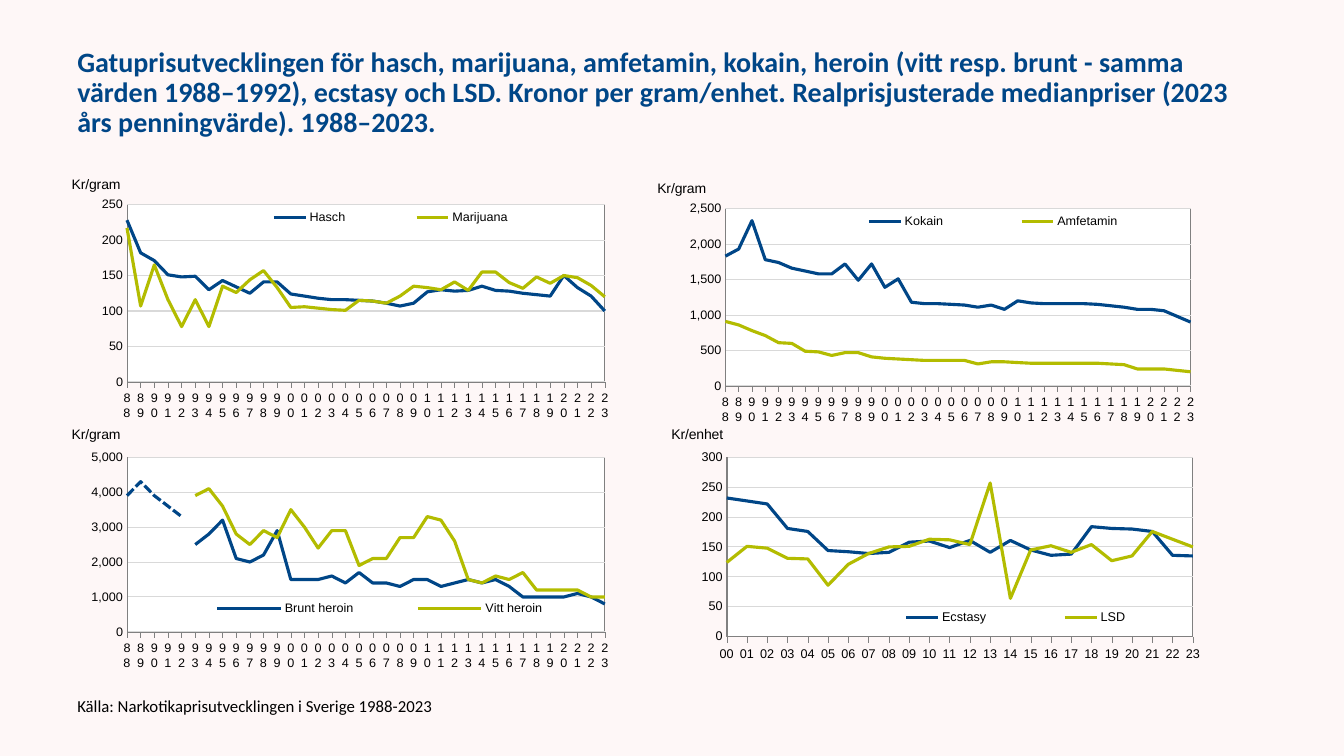
import pptx
import pptx.util
import pptx.chart.data
import pptx.dml.color
import pptx.enum.chart
import pptx.enum.dml
import pptx.enum.text
import pptx.oxml
import pptx.oxml.ns

BLUE, GREEN, BLACK = "004687", "B3BC00", "000000"
AXIS, GRID, WHITE, PAGE = "808080", "D9D9D9", "FFFFFF", "FEF7F7"
NS = pptx.oxml.ns.nsdecls("c", "a")
PERCENT_COL = pptx.util.Inches(13.333) / 100
PERCENT_ROW = pptx.util.Inches(7.5) / 100


def rgb(value):
    return pptx.dml.color.RGBColor.from_string(value)


def grid_box(left, top, width, height):
    return (round(left * PERCENT_COL), round(top * PERCENT_ROW),
            round(width * PERCENT_COL), round(height * PERCENT_ROW))


def style_font(font, name, size, color, bold=False):
    font.name, font.size, font.bold = name, pptx.util.Pt(size), bold
    font.color.rgb = rgb(color)


def style_line(line, color, width):
    line.color.rgb = rgb(color)
    line.width = pptx.util.Pt(width)


def fill_placeholder(sp, box, text, size, color, bold=False):
    sp.left, sp.top, sp.width, sp.height = grid_box(*box)
    tf = sp.text_frame
    tf.word_wrap = True
    tf.auto_size = pptx.enum.text.MSO_AUTO_SIZE.NONE
    tf.vertical_anchor = pptx.enum.text.MSO_ANCHOR.MIDDLE
    p = tf.paragraphs[0]
    pPr = p._p.get_or_add_pPr()
    pPr.set("marL", "0")
    pPr.set("indent", "0")
    pPr.append(pptx.oxml.parse_xml(f"<a:buNone {NS}/>"))
    p.alignment = pptx.enum.text.PP_ALIGN.LEFT
    p.line_spacing = 0.9
    p.space_before = pptx.util.Pt(0)
    r = p.add_run()
    r.text = text
    style_font(r.font, "Calibri", size, color, bold)


def set_layout(parent, index, target="", **percents):
    for old in parent.xpath("./c:layout"):
        parent.remove(old)
    inner = f'<c:layoutTarget val="{target}"/>' if target else ""
    inner += '<c:xMode val="edge"/><c:yMode val="edge"/>'
    inner += "".join(f'<c:{key} val="{value / 100:.4f}"/>' for key, value in percents.items())
    parent.insert(index, pptx.oxml.parse_xml(
        f"<c:layout {NS}><c:manualLayout>{inner}</c:manualLayout></c:layout>"))


def style_category_axis(axis):
    axis.major_tick_mark = pptx.enum.chart.XL_TICK_MARK.OUTSIDE
    axis.has_major_gridlines = False
    style_font(axis.tick_labels.font, "Arial", 9, BLACK)
    axis._element.xpath("./c:txPr/a:bodyPr")[0].set("rot", "0")
    style_line(axis.format.line, AXIS, 0.25)


def style_value_axis(axis, unit, top, step):
    axis.minimum_scale, axis.maximum_scale, axis.major_unit = 0, top, step
    axis.major_tick_mark = pptx.enum.chart.XL_TICK_MARK.NONE
    axis.has_major_gridlines = True
    style_line(axis.major_gridlines.format.line, GRID, 0.75)
    style_line(axis.format.line, AXIS, 0.25)
    style_font(axis.tick_labels.font, "Arial", 9, BLACK)
    axis.tick_labels.number_format = "#,##0"
    axis.tick_labels.number_format_is_linked = False
    axis._element.xpath("./c:crossAx | ./c:crosses")[-1].addnext(
        pptx.oxml.parse_xml(f'<c:crossBetween {NS} val="midCat"/>'))
    tf = axis.axis_title.text_frame
    r = tf.paragraphs[0].add_run()
    r.text = unit
    style_font(r.font, "Arial", 10, BLACK)
    tf._txBody.bodyPr.set("rot", "0")
    tf._txBody.bodyPr.set("vert", "horz")
    set_layout(axis.axis_title._element, 1, x=0.8, y=2)


def style_legend(chart, area, hidden):
    chart.has_legend = True
    legend = chart.legend
    legend.position = pptx.enum.chart.XL_LEGEND_POSITION.RIGHT
    legend.include_in_layout = False
    style_font(legend.font, "Arial", 9, BLACK)
    left, top, width = area
    set_layout(legend._element, 1, x=left, y=top, w=width, h=8)
    for index in hidden:
        legend._element.insert(1, pptx.oxml.parse_xml(
            f'<c:legendEntry {NS}><c:idx val="{index}"/><c:delete val="1"/></c:legendEntry>'))


def price_chart(s, box, unit, years, top, step, plot, legend, series):
    data = pptx.chart.data.CategoryChartData()
    data.categories = years
    for name, color, dashed, prices in series:
        data.add_series(name, prices)
    chart = s.shapes.add_chart(pptx.enum.chart.XL_CHART_TYPE.LINE, *grid_box(*box), data).chart
    chart.has_title = False
    style_font(chart.font, "Arial", 10, BLACK)
    chart.plots[0].vary_by_categories = False
    for line, (name, color, dashed, prices) in zip(chart.plots[0].series, series):
        line.smooth = False
        style_line(line.format.line, color, 2.25)
        if dashed:
            line.format.line.dash_style = pptx.enum.dml.MSO_LINE.SQUARE_DOT
    style_category_axis(chart.category_axis)
    style_value_axis(chart.value_axis, unit, top, step)
    style_legend(chart, legend, [i for i, entry in enumerate(series) if entry[2]])
    area = chart._chartSpace.xpath("./c:chart/c:plotArea")[0]
    set_layout(area, 0, "inner", **dict(zip("xywh", plot)))
    area.append(pptx.oxml.parse_xml(
        f'<c:spPr {NS}><a:solidFill><a:srgbClr val="{WHITE}"/></a:solidFill>'
        f'<a:ln w="6350"><a:solidFill><a:srgbClr val="{AXIS}"/></a:solidFill></a:ln></c:spPr>'))


def price_slide(prs):
    s = prs.slides.add_slide(prs.slide_layouts[1])
    s.background.fill.solid()
    s.background.fill.fore_color.rgb = rgb(PAGE)
    fill_placeholder(
        s.shapes.title, (5, 4, 90, 16.67),
        "Gatuprisutvecklingen för hasch, marijuana, amfetamin, kokain, heroin (vitt resp. brunt - "
        "samma värden 1988–1992), ecstasy och LSD. Kronor per gram/enhet. Realprisjusterade "
        "medianpriser (2023 års penningvärde). 1988–2023.", 20, BLUE, True)
    fill_placeholder(s.placeholders[1], (5, 91.07, 45, 4.93),
                     "Källa: Narkotikaprisutvecklingen i Sverige 1988-2023", 12, BLACK)

    years = [f"{year % 100:02d}" for year in range(1988, 2024)]
    hash_prices = [228, 182, 171, 151, 148, 149, 130, 143, 134, 125, 141, 141,
                   124, 121, 118, 116, 116, 115, 114, 111, 107, 111, 127, 130,
                   128, 129, 135, 129, 128, 125, 123, 121, 150, 133, 121, 100]
    marijuana = [217, 107, 165, 116, 78, 116, 78, 135, 126, 144, 157, 133,
                 105, 106, 104, 102, 101, 115, 114, 111, 121, 135, 133, 130,
                 141, 129, 155, 155, 140, 132, 148, 139, 150, 147, 136, 120]
    cocaine = [1830, 1930, 2330, 1780, 1740, 1660, 1620, 1580, 1580, 1720, 1490, 1720,
               1390, 1510, 1180, 1160, 1160, 1150, 1140, 1110, 1140, 1080, 1200, 1170,
               1160, 1160, 1160, 1160, 1150, 1130, 1110, 1080, 1080, 1060, 980, 900]
    amphetamine = [910, 860, 780, 710, 610, 600, 490, 480, 430, 470, 470, 410,
                   390, 380, 370, 360, 360, 360, 360, 310, 340, 340, 330, 320,
                   320, 320, 320, 320, 320, 310, 300, 240, 240, 240, 220, 200]
    shared_heroin = [3900, 4300, 3900, 3600, 3300] + [None] * 31
    brown_heroin = [None] * 5 + [
        2500, 2800, 3200, 2100, 2000, 2200, 2900, 1500, 1500, 1500, 1600, 1400, 1700, 1400, 1400, 1300,
        1500, 1500, 1300, 1400, 1500, 1400, 1500, 1300, 1000, 1000, 1000, 1000, 1100, 1000, 800]
    white_heroin = [None] * 5 + [
        3900, 4100, 3600, 2800, 2500, 2900, 2700, 3500, 3000, 2400, 2900, 2900, 1900, 2100, 2100, 2700,
        2700, 3300, 3200, 2600, 1500, 1400, 1600, 1500, 1700, 1200, 1200, 1200, 1200, 1000, 1000]
    ecstasy = [232, 227, 222, 181, 176, 144, 142, 139, 141, 158, 160, 149,
               161, 141, 161, 145, 136, 138, 184, 181, 180, 176, 136, 135]
    lsd = [124, 151, 148, 131, 130, 86, 121, 139, 150, 151, 163, 162,
           154, 257, 64, 145, 152, 141, 154, 127, 135, 176, 163, 150]

    price_chart(s, (4.8, 22.27, 43.05, 33.33), "Kr/gram", years, 250, 50,
                (10.8, 14.8, 82.6, 72.3), (24.6, 16, 63.6),
                [("Hasch", BLUE, False, hash_prices), ("Marijuana", GREEN, False, marijuana)])
    price_chart(s, (48.38, 22.8, 43.05, 33.33), "Kr/gram", years, 2500, 500,
                (13, 14.8, 80.4, 72.3), (25, 16, 68.6),
                [("Kokain", BLUE, False, cocaine), ("Amfetamin", GREEN, False, amphetamine)])
    price_chart(s, (4.8, 55.33, 43.05, 33.33), "Kr/gram", years, 5000, 1000,
                (10.8, 15.9, 82.6, 71.2), (16, 73.6, 77),
                [("Series 1", BLUE, True, shared_heroin), ("Brunt heroin", BLUE, False, brown_heroin),
                 ("Vitt heroin", GREEN, False, white_heroin)])
    price_chart(s, (49.43, 55.2, 42.98, 33.33), "Kr/enhet", years[12:], 300, 50,
                (10.8, 15.9, 80.7, 71.2), (29, 75.6, 63.7),
                [("Ecstasy", BLUE, False, ecstasy), ("LSD", GREEN, False, lsd)])


def main():
    prs = pptx.Presentation()
    prs.slide_width = pptx.util.Inches(13.333)
    prs.slide_height = pptx.util.Inches(7.5)
    price_slide(prs)
    prs.save("out.pptx")


if __name__ == "__main__":
    main()
